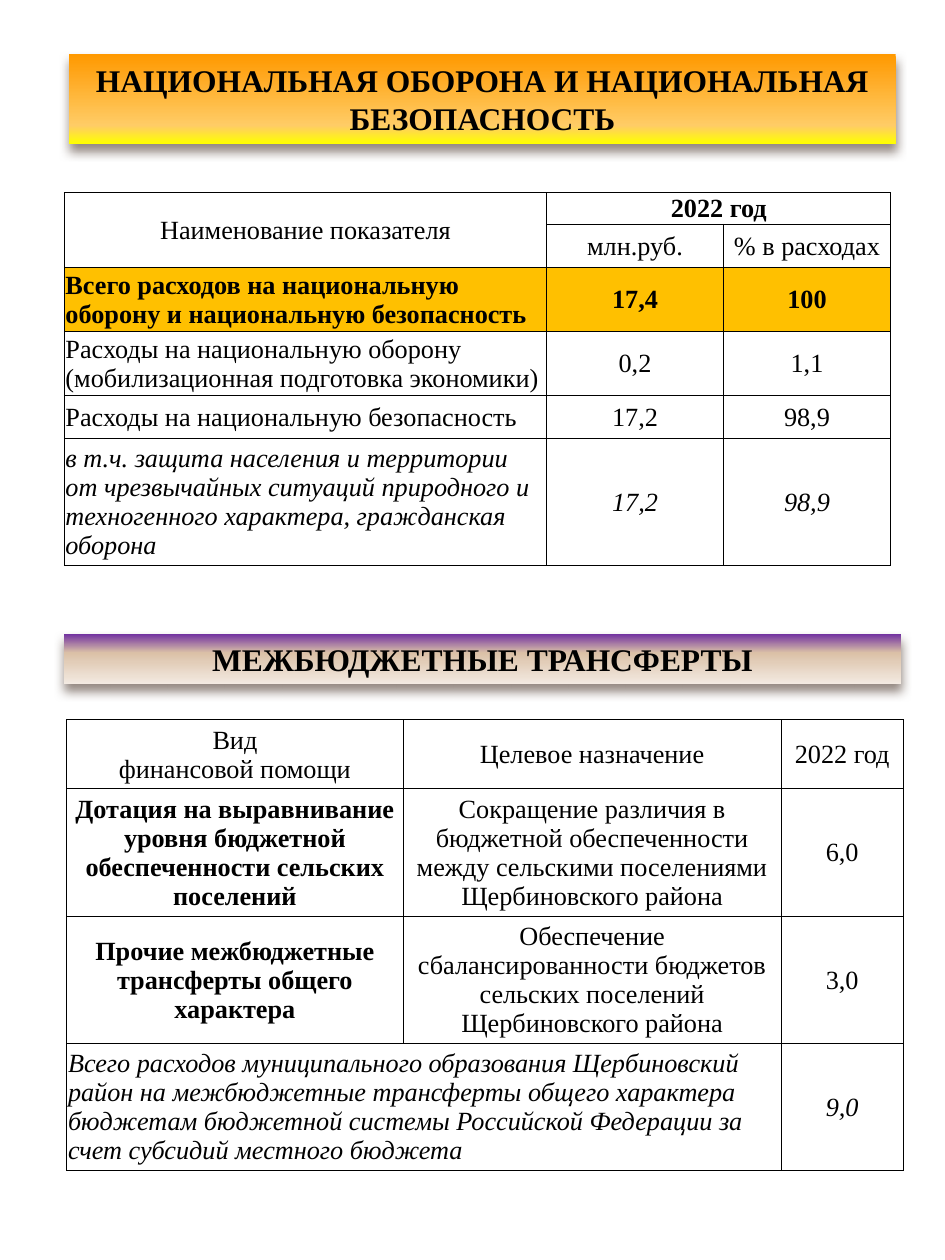
from lxml.etree import SubElement
from pptx import Presentation
from pptx.dml.color import RGBColor as Color
from pptx.enum.shapes import MSO_SHAPE as Shape
from pptx.enum.text import MSO_ANCHOR as Anchor, PP_ALIGN as Align
from pptx.oxml import parse_xml
from pptx.oxml.ns import nsdecls, qn
from pptx.util import Inches, Pt

COLORS = {
    "text": "000000", "border": "000000", "shadow": "4E3B30", "total": "FFC000",
    "orange": "FF9900", "sand": "FFCC66", "yellow": "FFFF00",
    "purple": "7030A0", "beige": "DBC1A7", "cream": "F3EAE2",
}
FONT = "Times New Roman"
WIDTH, HEIGHT = Inches(7.5), Inches(10)
GRID_COLUMNS, GRID_ROWS = 75, 100

DEFENCE_ROWS = [
    (2.5, "c cb cb", ["Наименование показателя", "2022 год", None]),
    (3.4, "c c c", [None, "млн.руб.", "% в расходах"]),
    (5.1, "lb cb cb", ["Всего расходов на национальную оборону и национальную безопасность",
                       "17,4", "100"]),
    (5.1, "l c c", ["Расходы на национальную оборону (мобилизационная подготовка экономики)",
                    "0,2", "1,1"]),
    (3.4, "l c c", ["Расходы на национальную безопасность", "17,2", "98,9"]),
    (10.1, "li ci ci", ["в т.ч. защита населения и территории от чрезвычайных ситуаций "
                        "природного и техногенного характера, гражданская оборона",
                        "17,2", "98,9"]),
]
TRANSFER_ROWS = [
    (5.5, "c c c", ["Вид\nфинансовой помощи", "Целевое назначение", "2022 год"]),
    (10.1, "cb c c", ["Дотация на выравнивание уровня бюджетной обеспеченности сельских поселений",
                      "Сокращение различия в\nбюджетной обеспеченности\n"
                      "между сельскими поселениями Щербиновского района", "6,0"]),
    (10.1, "cb c c", ["Прочие межбюджетные трансферты общего характера",
                      "Обеспечение сбалансированности бюджетов сельских поселений "
                      "Щербиновского района", "3,0"]),
    (10.1, "li c ci", ["Всего расходов муниципального образования Щербиновский район на "
                       "межбюджетные трансферты общего характера бюджетам бюджетной системы "
                       "Российской Федерации за счет субсидий местного бюджета", None, "9,0"]),
]


def across(columns):
    """Turn grid columns into a length."""
    return int(WIDTH * columns / GRID_COLUMNS)


def down(rows):
    """Turn grid rows into a length."""
    return int(HEIGHT * rows / GRID_ROWS)


def format_text(frame, size, align, bold=False, italic=False):
    """Give every paragraph and run of a frame one look."""
    for para in frame.paragraphs:
        para.alignment = align
        for span in para.runs:
            font = span.font
            font.name, font.size = FONT, Pt(size)
            font.bold, font.italic = bold, italic
            font.color.rgb = Color.from_string(COLORS["text"])


def fill_gradient(box, stops):
    """Fill a box from top to bottom with (percent, colour) stops."""
    box.fill.gradient()
    box.fill.gradient_angle = 270
    stop_list = box.element.spPr.find(".//" + qn("a:gsLst"))
    for stop in list(stop_list):
        stop_list.remove(stop)
    for percent, name in stops:
        stop = SubElement(stop_list, qn("a:gs"), pos=str(percent * 1000))
        SubElement(stop, qn("a:srgbClr"), val=COLORS[name])


def cast_shadow(box):
    """Drop a soft shadow straight below a box."""
    box.shadow.inherit = False
    effects = box.element.spPr.find(qn("a:effectLst"))
    shadow = SubElement(effects, qn("a:outerShdw"), blurRad=str(Pt(6)), dist=str(Pt(4)),
                        dir="5400000", rotWithShape="0")
    color = SubElement(shadow, qn("a:srgbClr"), val=COLORS["shadow"])
    SubElement(color, qn("a:alpha"), val="60000")


def add_banner(page, left, top, width, height, text, stops):
    """Add a section heading on a shaded bar."""
    box = page.shapes.add_shape(Shape.RECTANGLE, across(left), down(top),
                                across(width), down(height))
    fill_gradient(box, stops)
    box.line.fill.background()
    cast_shadow(box)
    frame = box.text_frame
    frame.word_wrap = True
    frame.vertical_anchor = Anchor.MIDDLE
    frame.text = text
    format_text(frame, 18, Align.CENTER, bold=True)


def draw_borders(cell):
    """Draw a thin line on all four sides of a cell."""
    props = cell._tc.get_or_add_tcPr()
    for place, side in enumerate("LRTB"):
        props.insert(place, parse_xml(
            f'<a:ln{side} {nsdecls("a")} w="{Pt(0.5)}"><a:solidFill>'
            f'<a:srgbClr val="{COLORS["border"]}"/></a:solidFill></a:ln{side}>'))


def style_cell(cell, text, mark, fill):
    """Set the text, fill and borders of a cell."""
    cell.margin_left = cell.margin_right = cell.margin_top = Inches(0.01)
    cell.margin_bottom = 0
    cell.vertical_anchor = Anchor.MIDDLE
    if fill:
        cell.fill.solid()
        cell.fill.fore_color.rgb = Color.from_string(COLORS[fill])
    else:
        cell.fill.background()
    draw_borders(cell)
    if text:
        cell.text_frame.text = text
        align = Align.LEFT if "l" in mark else Align.CENTER
        format_text(cell.text_frame, 15, align, "b" in mark, "i" in mark)


def add_grid(page, left, top, widths, rows, merges, total_row=None):
    """Add a bordered table and merge the given cell ranges."""
    height = sum(row[0] for row in rows)
    table = page.shapes.add_table(len(rows), len(widths), across(left), down(top),
                                  across(sum(widths)), down(height)).table
    table.first_row = table.horz_banding = False
    for column, width in zip(table.columns, widths):
        column.width = across(width)
    for index, (row_height, marks, texts) in enumerate(rows):
        table.rows[index].height = down(row_height)
        fill = "total" if index == total_row else None
        for column, (text, mark) in enumerate(zip(texts, marks.split())):
            style_cell(table.cell(index, column), text, mark, fill)
    for first, last in merges:
        table.cell(*first).merge(table.cell(*last))


def main():
    """Build the page with two headed tables."""
    deck = Presentation()
    deck.slide_width, deck.slide_height = WIDTH, HEIGHT
    page = deck.slides.add_slide(deck.slide_layouts[6])
    add_banner(page, 5.5, 4.3, 65.6, 7.1, "НАЦИОНАЛЬНАЯ ОБОРОНА И НАЦИОНАЛЬНАЯ БЕЗОПАСНОСТЬ",
               [(0, "orange"), (80, "sand"), (100, "yellow")])
    add_grid(page, 5.1, 15.3, [38.3, 14, 13.3], DEFENCE_ROWS,
             [((0, 0), (1, 0)), ((0, 1), (0, 2))], total_row=2)
    add_banner(page, 5.1, 50.3, 66.4, 4, "МЕЖБЮДЖЕТНЫЕ ТРАНСФЕРТЫ",
               [(0, "purple"), (38, "beige"), (100, "cream")])
    add_grid(page, 5.3, 57.1, [26.7, 30, 9.7], TRANSFER_ROWS, [((3, 0), (3, 1))])
    deck.save("out.pptx")


if __name__ == "__main__":
    main()
